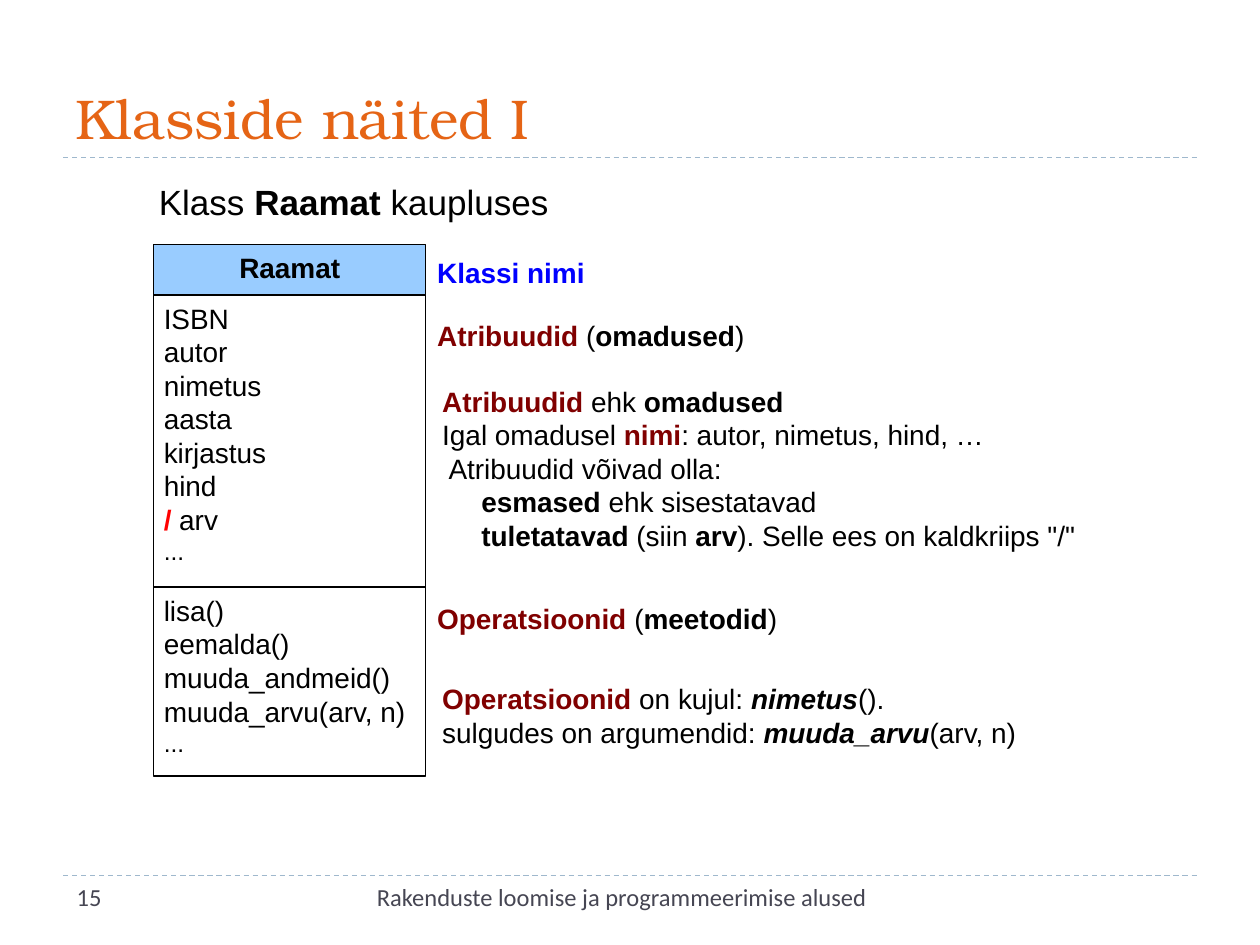
from lxml.etree import SubElement
from pptx import Presentation
from pptx.dml.color import RGBColor
from pptx.enum.dml import MSO_LINE
from pptx.enum.shapes import MSO_CONNECTOR, MSO_SHAPE
from pptx.enum.text import MSO_ANCHOR, PP_ALIGN
from pptx.oxml.ns import qn
from pptx.util import Inches, Pt

BLACK = RGBColor(0x00, 0x00, 0x00)
WHITE = RGBColor(0xFF, 0xFF, 0xFF)
RED = RGBColor(0xFF, 0x00, 0x00)
BLUE = RGBColor(0x00, 0x00, 0xFF)
MAROON = RGBColor(0x80, 0x00, 0x00)
ORANGE = RGBColor(0xE5, 0x64, 0x15)
SLATE = RGBColor(0x46, 0x46, 0x53)
HEADER_BLUE = RGBColor(0x99, 0xCC, 0xFF)
RULE_BLUE = RGBColor(0x9F, 0xB8, 0xCD)

BOLD = {"bold": True}
BOLD_ITALIC = {"bold": True, "italic": True}
TERM = {"bold": True, "color": MAROON}
SMALL = {"size": 14}


def write_text(shape, lines, size=16, font="Arial", color=BLACK, bold=False,
               align=PP_ALIGN.LEFT, anchor=MSO_ANCHOR.TOP,
               insets=(0.1, 0.05, 0.1, 0.05), indents=()):
    """Write lines, each a string or a list of strings and (text, format) pairs.

    Insets run left, top, right, bottom; indents maps line number to inches.
    """
    frame = shape.text_frame
    frame.word_wrap = True
    frame.vertical_anchor = anchor
    (frame.margin_left, frame.margin_top,
     frame.margin_right, frame.margin_bottom) = map(Inches, insets)
    indents = dict(indents)
    for number, line in enumerate(lines):
        paragraph = frame.paragraphs[0] if number == 0 else frame.add_paragraph()
        paragraph.alignment = align
        if number in indents:
            paragraph._p.get_or_add_pPr().set("marL", str(Inches(indents[number])))
        for part in [line] if isinstance(line, str) else line:
            text, style = (part, {}) if isinstance(part, str) else part
            run = paragraph.add_run()
            run.text = text
            run.font.name = font
            run.font.size = Pt(style.get("size", size))
            run.font.bold = style.get("bold", bold)
            run.font.italic = style.get("italic", False)
            run.font.color.rgb = style.get("color", color)


def add_rectangle(shapes, left, top, width, height, fill, outlined):
    shape = shapes.add_shape(MSO_SHAPE.RECTANGLE, Inches(left), Inches(top),
                             Inches(width), Inches(height))
    shape.shadow.inherit = False
    shape.fill.solid()
    shape.fill.fore_color.rgb = fill
    if outlined:
        shape.line.color.rgb = BLACK
        shape.line.width = Pt(0.75)
    else:
        shape.line.fill.background()
    return shape


presentation = Presentation()
presentation.slide_width = Inches(10)
presentation.slide_height = Inches(7.5)
slide = presentation.slides.add_slide(presentation.slide_layouts[5])

# Dashed rules under the title and above the footer
for y in (6.95, 1.25):
    rule = slide.shapes.add_connector(MSO_CONNECTOR.STRAIGHT, Inches(0.5), Inches(y),
                                      Inches(9.5), Inches(y))
    rule.line.color.rgb = RULE_BLUE
    rule.line.width = Pt(0.75)
    rule.line.dash_style = MSO_LINE.DASH
    SubElement(rule._element.spPr, qn("a:effectLst"))

title = slide.shapes.title
title.left, title.top, title.width, title.height = map(Inches, (0.5, 0.25, 9, 1))
write_text(title, ["Klasside näited I"], size=32, font="TeX Gyre Bonum",
           color=ORANGE, anchor=MSO_ANCHOR.BOTTOM)

# Footer and free-standing labels
footer_format = {"size": 14, "font": "Calibri", "color": SLATE}
label_insets = (0.04, 0.04, 0, 0)
text_boxes = [
    ((2.87, 6.95, 4.13, 0.4), ["Rakenduste loomise ja programmeerimise alused"],
     {**footer_format, "align": PP_ALIGN.CENTER}),
    ((0.51, 6.95, 2.32, 0.4), ["15"], footer_format),
    ((1.22, 1.39, 4.49, 0.39), [["Klass ", ("Raamat", BOLD), " kaupluses"]],
     {"size": 20, "insets": label_insets}),
    ((3.43, 2, 1.92, 0.28), ["Klassi nimi"],
     {"color": BLUE, "bold": True, "insets": (0.04, 0.03, 0, 0)}),
    ((3.43, 2.49, 2.62, 0.28),
     [[("Atribuudid ", TERM), "(", ("omadused", BOLD), ")"]],
     {"insets": label_insets}),
    ((3.43, 4.73, 3.18, 0.42),
     [[("Operatsioonid ", TERM), "(", ("meetodid", BOLD), ")"]],
     {"insets": label_insets}),
]
for bounds, lines, text_format in text_boxes:
    write_text(slide.shapes.add_textbox(*map(Inches, bounds)), lines, **text_format)

# Class diagram: name, attributes and operations stacked without gaps
attributes = ["ISBN", "autor", "nimetus", "aasta", "kirjastus", "hind",
              [("/", {"bold": True, "color": RED}), " arv"], [("...", SMALL)]]
operations = ["lisa()", "eemalda()", "muuda_andmeid()", "muuda_arvu(arv, n)",
              [("...", SMALL)]]
compartments = [
    (0.4, HEADER_BLUE, ["Raamat"],
     {"bold": True, "align": PP_ALIGN.CENTER, "insets": (0, 0.05, 0, 0.05)}),
    (2.32, WHITE, attributes, {"insets": (0.08, 0.05, 0, 0.05)}),
    (1.5, WHITE, operations, {"insets": (0.08, 0.05, 0, 0.05)}),
]
class_diagram = slide.shapes.add_group_shape()
top = 1.94
for height, fill, lines, text_format in compartments:
    compartment = add_rectangle(class_diagram.shapes, 1.22, top, 2.16, height, fill, True)
    write_text(compartment, lines, **text_format)
    top += height

# Explanations beside the attributes and the operations
explanations = [
    ((3.43, 2.96, 5.28, 1.5), [
        [("Atribuudid ", TERM), "ehk", (" omadused", BOLD)],
        ["Igal omadusel ", ("nimi", TERM), ": autor, nimetus, hind, …"],
        "Atribuudid võivad olla:",
        [("esmased", BOLD), " ehk sisestatavad"],
        [("tuletatavad", BOLD), " (siin ", ("arv", BOLD),
         '). Selle ees on kaldkriips "/"'],
    ], {2: 0.05, 3: 0.31, 4: 0.31}),
    ((3.43, 5.32, 5.23, 0.61), [
        [("Operatsioonid", TERM), " on kujul: ", ("nimetus", BOLD_ITALIC), "()."],
        ["sulgudes on argumendid: ", ("muuda_arvu", BOLD_ITALIC), "(arv, n)"],
    ], {}),
]
for bounds, lines, indents in explanations:
    explanation = add_rectangle(slide.shapes, *bounds, WHITE, False)
    write_text(explanation, lines, insets=(0.08, 0.09, 0.1, 0.05), indents=indents)

presentation.save("out.pptx")
